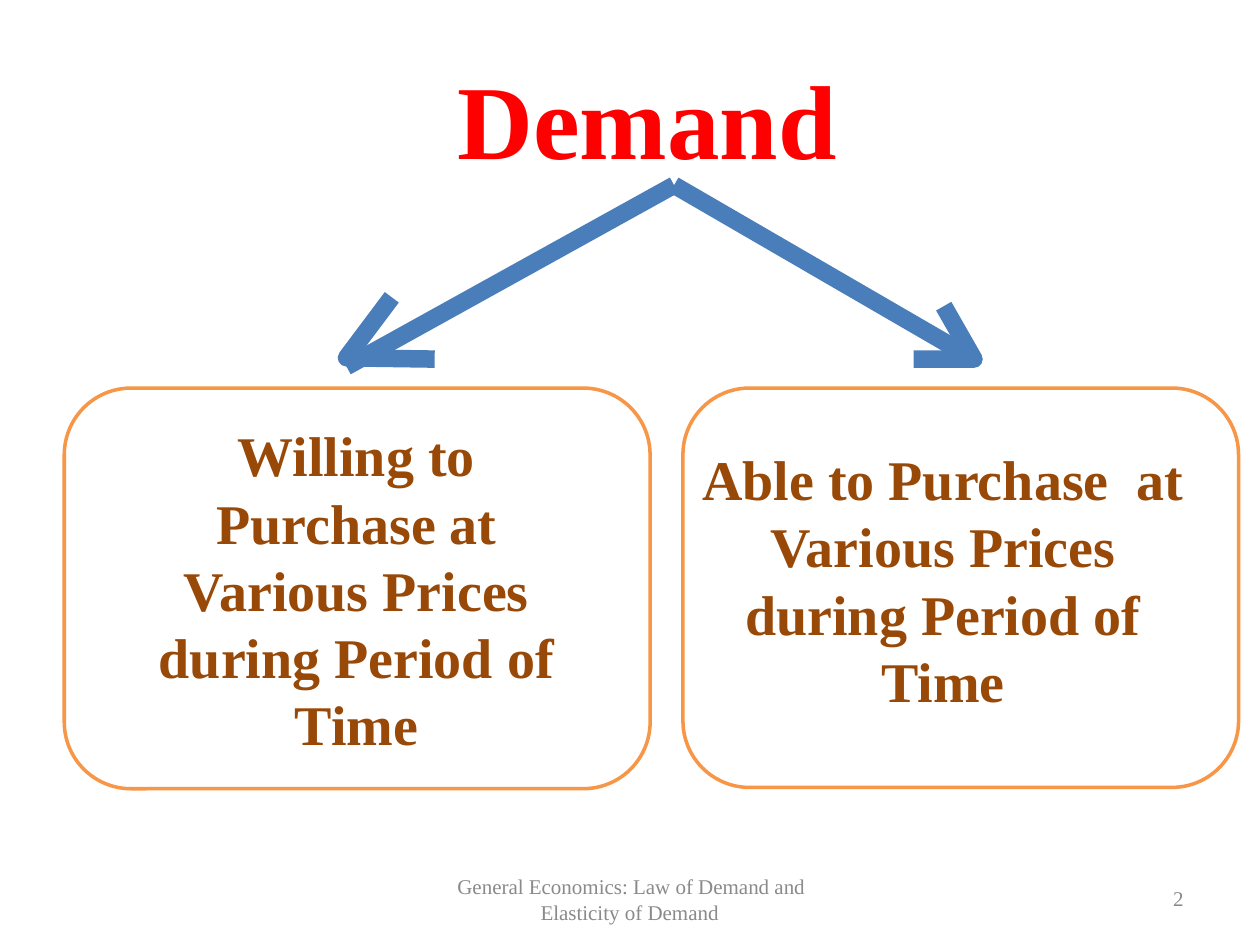
from pptx import Presentation
from pptx.dml.color import RGBColor
from pptx.enum.shapes import MSO_CONNECTOR as Connector, MSO_SHAPE as Shape
from pptx.enum.text import MSO_ANCHOR as Anchor, MSO_AUTO_SIZE as AutoSize, PP_ALIGN as Align
from pptx.oxml.ns import qn
from pptx.util import Inches, Pt
from lxml import etree

FONT = "Times New Roman"
RED, BLUE, ORANGE, BROWN, GRAY = "FF0000", "4A7EBB", "F79646", "984807", "8A8A8A"
APEX = (5.35, 1.47)


def color(hex_text):
    return RGBColor.from_string(hex_text)


def place(shape, left, top, width, height):
    shape.left, shape.top = Inches(left), Inches(top)
    shape.width, shape.height = Inches(width), Inches(height)


def write(shape, text, size, hex_text, bold=False, align=Align.LEFT, wrap=True):
    frame = shape.text_frame
    frame.text = text
    frame.word_wrap = wrap
    frame.auto_size = AutoSize.NONE
    frame.vertical_anchor = Anchor.TOP
    frame.margin_left = frame.margin_right = frame.margin_bottom = 0
    frame.margin_top = Inches(0.01)
    para = frame.paragraphs[0]
    para.alignment = align
    para.space_before = Pt(1)
    para.font.name, para.font.size = FONT, Pt(size)
    para.font.bold, para.font.color.rgb = bold, color(hex_text)


def add_text(page, bounds, text, size, hex_text, **style):
    box = page.shapes.add_textbox(*map(Inches, bounds))
    write(box, text, size, hex_text, **style)


def outline(shape, hex_text, width):
    shape.line.color.rgb = color(hex_text)
    shape.line.width = Pt(width)


def add_arrow(page, end, head):
    """Draw a shaft from the apex to end, with an open head through three points."""
    shaft = page.shapes.add_connector(Connector.STRAIGHT, *map(Inches, APEX + end))
    etree.SubElement(shaft._element.spPr, qn("a:effectLst"))
    outline(shaft, BLUE, 10)
    start, *rest = [(Inches(x), Inches(y)) for x, y in head]
    builder = page.shapes.build_freeform(*start)
    builder.add_line_segments(rest, close=False)
    chevron = builder.convert_to_shape()
    chevron.fill.background()
    chevron.shadow.inherit = False
    outline(chevron, BLUE, 10)


def add_card(page, bounds, text_bounds, lines):
    card = page.shapes.add_shape(Shape.ROUNDED_RECTANGLE, *map(Inches, bounds))
    card.fill.background()
    card.shadow.inherit = False
    outline(card, ORANGE, 2)
    add_text(page, text_bounds, "\v".join(lines), 32, BROWN, bold=True, align=Align.CENTER)


def main():
    deck = Presentation()
    deck.slide_width, deck.slide_height = Inches(10), Inches(7.5)
    page = deck.slides.add_slide(deck.slide_layouts[5])

    title = page.shapes.title
    place(title, 3.63, 0.42, 3.84, 1.02)
    write(title, "Demand", 60, RED, bold=True, wrap=False)

    add_arrow(page, (2.75, 2.91), [(3.45, 2.85), (2.75, 2.84), (3.11, 2.36)])
    add_arrow(page, (7.73, 2.85), [(7.25, 2.85), (7.73, 2.85), (7.49, 2.43)])

    ending = ["Various Prices", "during Period of", "Time"]
    add_card(page, (0.51, 3.08, 4.65, 3.18), (1.25, 3.33, 3.16, 2.71),
             ["Willing to", "Purchase at"] + ending)
    add_card(page, (5.42, 3.08, 4.41, 3.17), (5.42, 3.52, 4.13, 2.17),
             ["Able to Purchase  at"] + ending)

    for bounds, text in [
        ((3.63, 6.92, 2.75, 0.23), "General Economics: Law of Demand and"),
        ((4.29, 7.13, 1.43, 0.22), "Elasticity of Demand"),
        ((9.31, 7.02, 0.11, 0.23), "2"),
    ]:
        add_text(page, bounds, text, 12, GRAY, wrap=False)

    deck.save("out.pptx")


if __name__ == "__main__":
    main()
